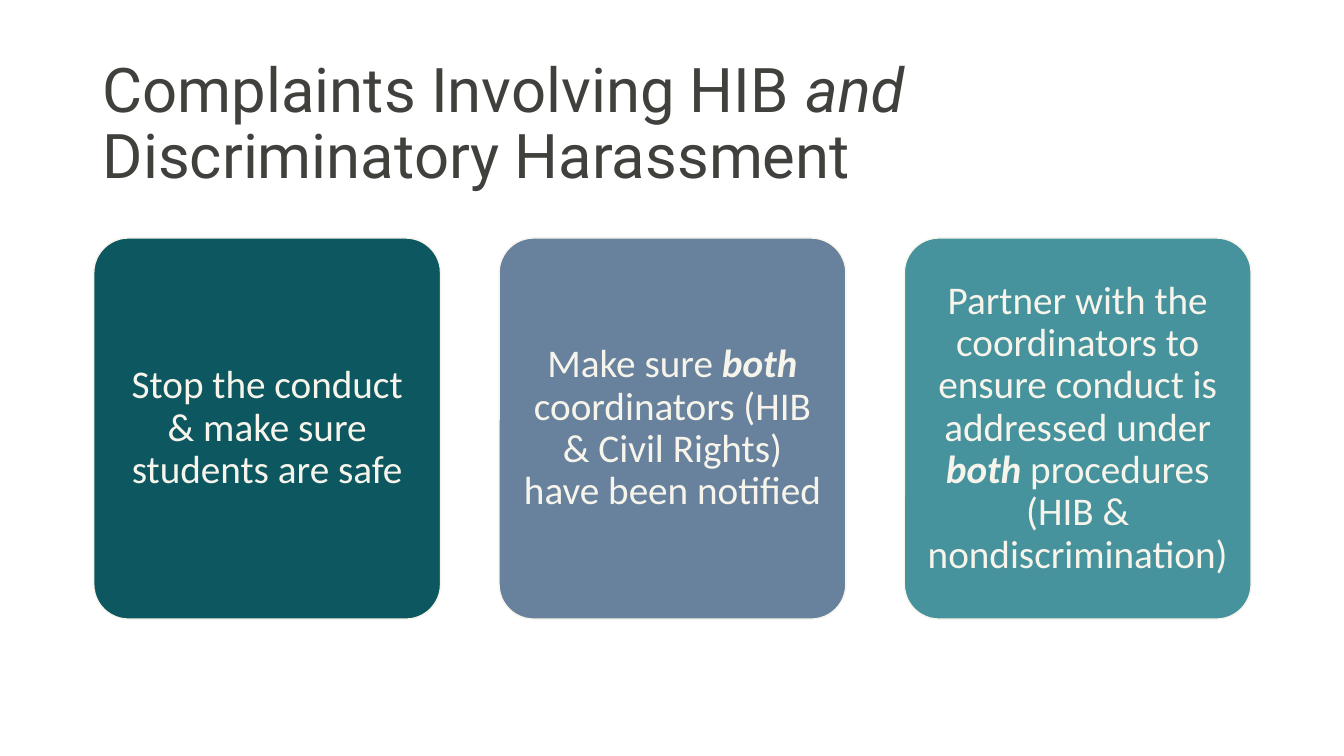
from dataclasses import dataclass

from pptx import Presentation
from pptx.dml.color import RGBColor
from pptx.enum.shapes import MSO_SHAPE
from pptx.enum.text import MSO_ANCHOR, MSO_AUTO_SIZE, PP_ALIGN
from pptx.util import Pt

ROUNDED = MSO_SHAPE.ROUNDED_RECTANGLE
MIDDLE = MSO_ANCHOR.MIDDLE
NO_AUTOFIT = MSO_AUTO_SIZE.NONE
LEFT, CENTER = PP_ALIGN.LEFT, PP_ALIGN.CENTER
TITLE_ONLY = 5


@dataclass(frozen=True)
class Theme:
    title_color: str = "40403D"
    card_text_color: str = "F7F5EB"
    card_fills: tuple = ("0D5761", "68829E", "46929D")
    title_font: str = "Roboto"
    card_font: str = "Calibri"
    title_size: int = 44
    card_size: int = 28


THEME = Theme()

CARD_LEFT, CARD_TOP = 67, 170
CARD_WIDTH, CARD_HEIGHT = 247.7, 272.2
CARD_PITCH = 289.5
CARD_INSET = 8.64

# Each text is a list of (wording, emphasis) spans.
TITLE = [
    ("Complaints Involving HIB ", {}),
    ("and ", {"italic": True}),
    ("Discriminatory Harassment", {}),
]
STRONG = {"bold": True, "italic": True}
CARDS = [
    [("Stop the conduct & make sure students are safe", {})],
    [
        ("Make sure ", {}),
        ("both", STRONG),
        (" coordinators (HIB & Civil Rights) have been notified", {}),
    ],
    [
        ("Partner with the coordinators to ensure conduct is addressed under ", {}),
        ("both", STRONG),
        (" procedures (HIB & nondiscrimination)", {}),
    ],
]


def set_attributes(target, values):
    for name, value in values.items():
        setattr(target, name, value)


def write_spans(box, spans, align, font, size, color):
    """Fill the box with one paragraph of spans, centred vertically."""
    set_attributes(box.text_frame, {
        "word_wrap": True,
        "auto_size": NO_AUTOFIT,
        "vertical_anchor": MIDDLE,
    })
    para = box.text_frame.paragraphs[0]
    set_attributes(para, {"alignment": align, "line_spacing": 0.9})
    for wording, emphasis in spans:
        span = para.add_run()
        span.text = wording
        set_attributes(span.font, {"name": font, "size": Pt(size), **emphasis})
        span.font.color.rgb = RGBColor.from_string(color)


def add_title(page, spans):
    title = page.shapes.title
    set_attributes(title, {
        "left": Pt(66.24), "top": Pt(39.6),
        "width": Pt(828), "height": Pt(100),
    })
    write_spans(title, spans, LEFT, THEME.title_font, THEME.title_size,
                THEME.title_color)


def add_card(page, left, fill, spans):
    card = page.shapes.add_shape(ROUNDED, Pt(left), Pt(CARD_TOP),
                                 Pt(CARD_WIDTH), Pt(CARD_HEIGHT))
    card.adjustments[0] = 0.1
    card.shadow.inherit = False
    card.fill.solid()
    card.fill.fore_color.rgb = RGBColor.from_string(fill)
    card.line.color.rgb = RGBColor.from_string(THEME.card_text_color)
    card.line.width = Pt(1)
    sides = ("left", "top", "right", "bottom")
    set_attributes(card.text_frame,
                   {f"margin_{side}": Pt(CARD_INSET) for side in sides})
    write_spans(card, spans, CENTER, THEME.card_font, THEME.card_size,
                THEME.card_text_color)


def main():
    deck = Presentation()
    set_attributes(deck, {"slide_width": Pt(960), "slide_height": Pt(540)})
    page = deck.slides.add_slide(deck.slide_layouts[TITLE_ONLY])
    add_title(page, TITLE)
    for index, (fill, spans) in enumerate(zip(THEME.card_fills, CARDS)):
        add_card(page, CARD_LEFT + index * CARD_PITCH, fill, spans)
    deck.save("out.pptx")


if __name__ == "__main__":
    main()
